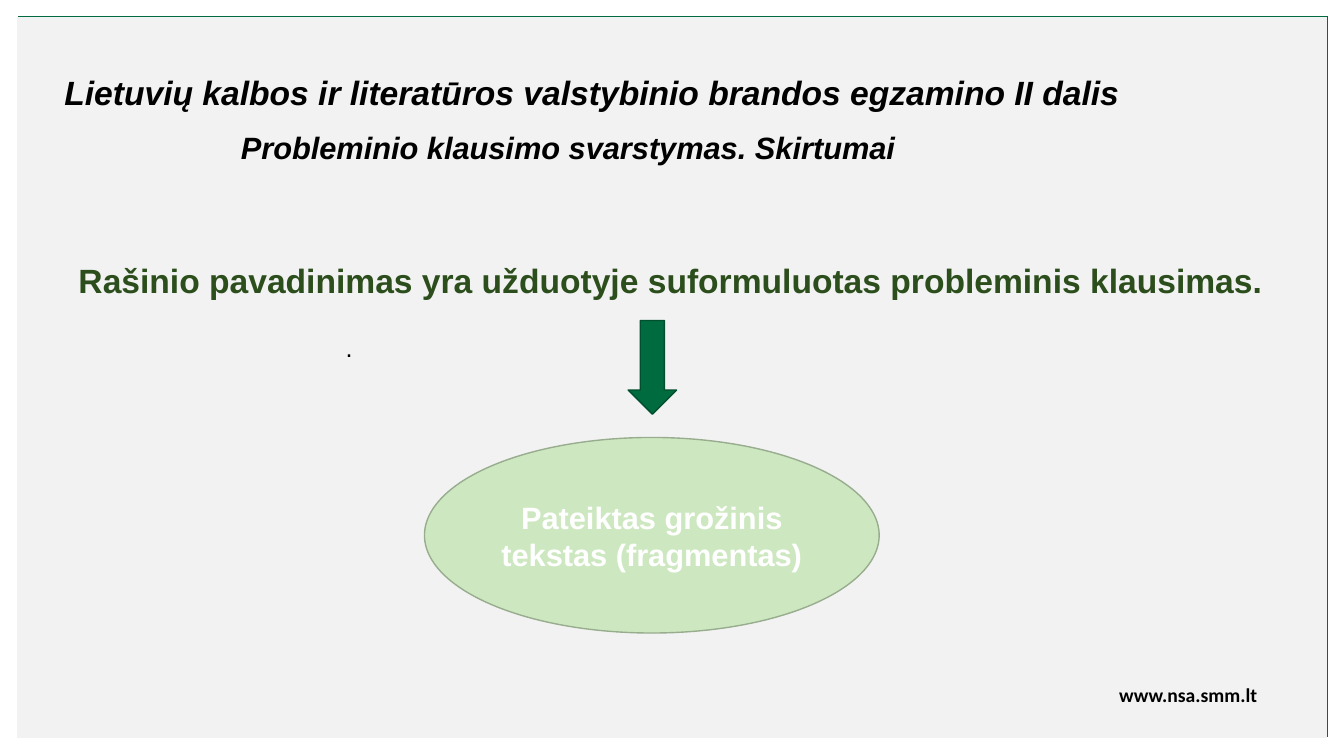
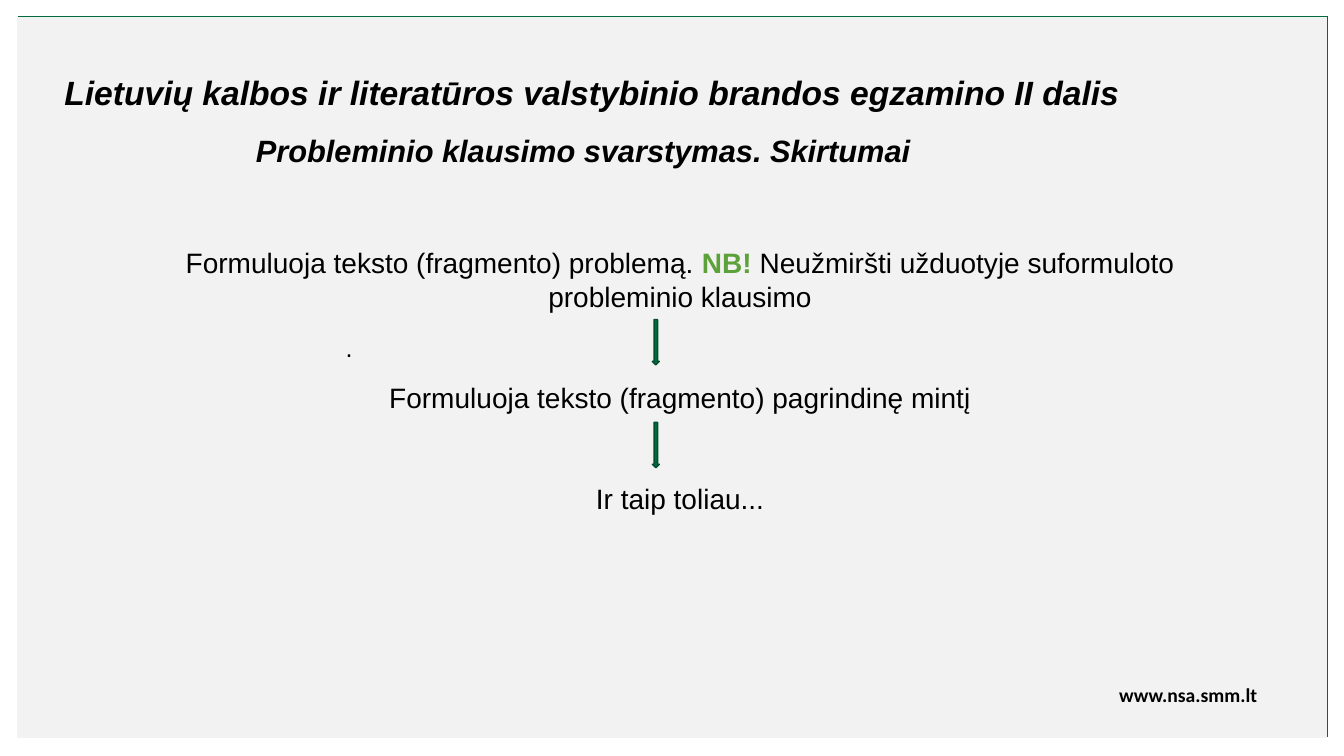
from pptx import Presentation
from pptx.dml.color import RGBColor
from pptx.enum.shapes import MSO_SHAPE
from pptx.enum.text import MSO_ANCHOR, PP_ALIGN
from pptx.util import Pt

PX = 9144
SLIDE_W, SLIDE_H = 1333, 750
BLANK_LAYOUT = 6

RECTANGLE, ELLIPSE, DOWN_ARROW = MSO_SHAPE.RECTANGLE, MSO_SHAPE.OVAL, MSO_SHAPE.DOWN_ARROW
LEFT, CENTER, RIGHT, JUSTIFY = PP_ALIGN.LEFT, PP_ALIGN.CENTER, PP_ALIGN.RIGHT, PP_ALIGN.JUSTIFY
MIDDLE = MSO_ANCHOR.MIDDLE

BLACK = RGBColor(0x00, 0x00, 0x00)
WHITE = RGBColor(0xFF, 0xFF, 0xFF)
PANEL_GREY = RGBColor(0xF2, 0xF2, 0xF2)
BRAND_GREEN = RGBColor(0x00, 0x6B, 0x3E)
ARROW_EDGE = RGBColor(0x00, 0x4F, 0x2E)
DARK_GREEN = RGBColor(0x2C, 0x4E, 0x1C)
BRIGHT_GREEN = RGBColor(0x5D, 0xA1, 0x3B)
PALE_GREEN = RGBColor(0xCD, 0xE8, 0xC0)
PALE_EDGE = RGBColor(0x98, 0xAC, 0x8E)

BODY = {"name": "Arial", "size": Pt(20), "bold": False, "italic": False, "color": BLACK}
TITLE = {**BODY, "size": Pt(24), "bold": True, "italic": True}
SUBTITLE = {**TITLE, "size": Pt(22)}
STATEMENT = {**BODY, "size": Pt(24), "bold": True, "color": DARK_GREEN}
BUBBLE = {**BODY, "size": Pt(22), "bold": True, "color": WHITE}
ACCENT = {**BODY, "bold": True, "color": BRIGHT_GREEN}
DOT = {**BODY, "size": Pt(18)}
FOOTER = {**BODY, "name": "Calibri", "size": Pt(14), "bold": True}

EXAM_TITLE = "Lietuvių kalbos ir literatūros valstybinio brandos egzamino II dalis"
TOPIC = "Probleminio klausimo svarstymas. Skirtumai"
STEPS = [
    [("Formuluoja teksto (fragmento) problemą. ", BODY), ("NB! ", ACCENT),
     ("Neužmiršti užduotyje suformuloto probleminio klausimo", BODY)],
    [("Formuluoja teksto (fragmento) pagrindinę mintį", BODY)],
    [("Ir taip toliau...", BODY)],
]


def to_emu(box):
    """Turn a px box into EMU lengths."""
    return [length * PX for length in box]


def write_runs(paragraph, runs, align):
    """Fill one paragraph with (text, style) runs."""
    paragraph.alignment = align
    for text, style in runs:
        run = paragraph.add_run()
        run.text = text
        for key, value in style.items():
            if key == "color":
                run.font.color.rgb = value
            else:
                setattr(run.font, key, value)


def add_text(slide, box, paragraphs, align=LEFT, line_spacing=None, gap=0):
    """Place a text box holding paragraphs of styled runs."""
    frame = slide.shapes.add_textbox(*to_emu(box)).text_frame
    frame.word_wrap = True
    for index, runs in enumerate(paragraphs):
        paragraph = frame.paragraphs[0] if index == 0 else frame.add_paragraph()
        if index:
            paragraph.space_before = Pt(gap)
        if line_spacing:
            paragraph.line_spacing = line_spacing
        write_runs(paragraph, runs, align)


def add_figure(slide, kind, box, fill, edge=None):
    """Place a flat filled shape, outlined when an edge colour is given."""
    figure = slide.shapes.add_shape(kind, *to_emu(box))
    figure.shadow.inherit = False
    figure.fill.solid()
    figure.fill.fore_color.rgb = fill
    if edge is None:
        figure.line.fill.background()
    else:
        figure.line.color.rgb = edge
        figure.line.width = Pt(1)
    return figure


def add_arrow(slide, box):
    """Place a green arrow pointing down."""
    add_figure(slide, DOWN_ARROW, box, BRAND_GREEN, ARROW_EDGE)


def add_frame(prs, topic_box):
    """Start a slide with the shared panel, footer and headings."""
    slide = prs.slides.add_slide(prs.slide_layouts[BLANK_LAYOUT])
    add_figure(slide, RECTANGLE, (18, 16, 1299, 715), BRAND_GREEN)
    add_figure(slide, RECTANGLE, (17, 17, 1299, 715), PANEL_GREY)
    add_text(slide, (937, 673, 320, 34), [[("www.nsa.smm.lt", FOOTER)]], RIGHT)
    add_text(slide, (54, 66, 1128, 50), [[(EXAM_TITLE, TITLE)]])
    add_text(slide, (333, 325, 667, 40), [[(".", DOT)]], JUSTIFY)
    add_text(slide, topic_box, [[(TOPIC, SUBTITLE)]])
    return slide


def add_bubble(slide, box, text):
    """Place the pale ellipse with its centred label."""
    bubble = add_figure(slide, ELLIPSE, box, PALE_GREEN, PALE_EDGE)
    frame = bubble.text_frame
    frame.word_wrap = True
    frame.vertical_anchor = MIDDLE
    write_runs(frame.paragraphs[0], [(text, BUBBLE)], CENTER)


def build_question_slide(prs):
    """Build the slide leading from the essay title to the given text."""
    slide = add_frame(prs, (229, 123, 907, 47))
    statement = "Rašinio pavadinimas yra užduotyje suformuluotas probleminis klausimas."
    add_text(slide, (68, 233, 1198, 71), [[(statement, STATEMENT)]], JUSTIFY, 1.5)
    add_bubble(slide, (421, 434, 451, 194), "Pateiktas grožinis tekstas (fragmentas)")
    add_arrow(slide, (623, 318, 48, 93))


def build_steps_slide(prs):
    """Build the slide with the chain of writing steps."""
    slide = add_frame(prs, (244, 126, 845, 47))
    left, top, width, height = 124, 239, 1101, 279
    add_text(slide, (left, top, width, height), STEPS, CENTER, gap=48)
    first_arrow, arrow_pitch = 78, 102
    for index in range(len(STEPS) - 1):
        add_arrow(slide, (left + 523, top + first_arrow + index * arrow_pitch, 7, 45))


def main():
    """Build and save the presentation."""
    prs = Presentation()
    prs.slide_width, prs.slide_height = to_emu((SLIDE_W, SLIDE_H))
    build_question_slide(prs)
    build_steps_slide(prs)
    prs.save("out.pptx")


if __name__ == "__main__":
    main()
